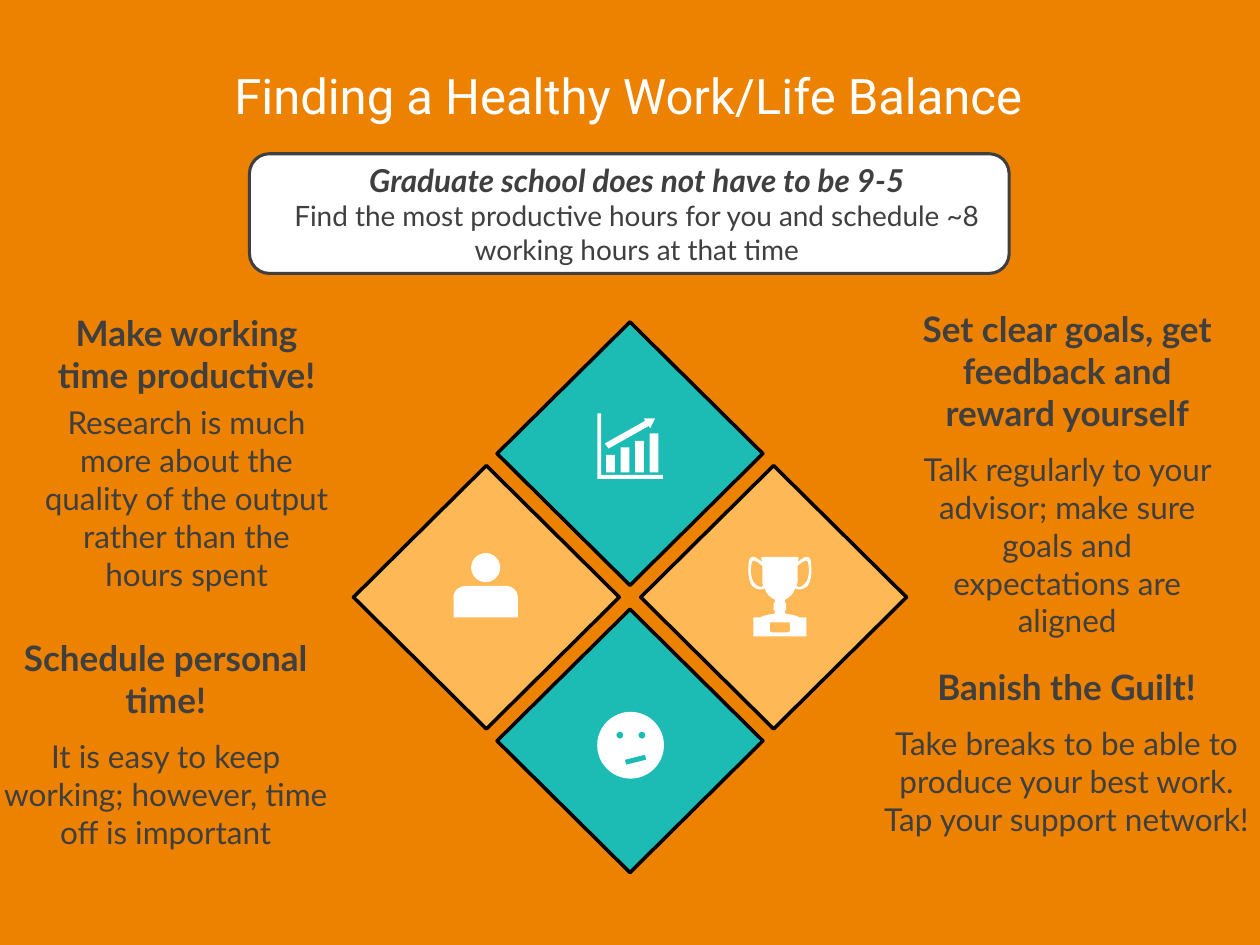
from math import cos, pi, sin

from pptx import Presentation
from pptx.dml.color import RGBColor
from pptx.enum.shapes import MSO_SHAPE
from pptx.enum.text import MSO_ANCHOR, MSO_AUTO_SIZE, PP_ALIGN
from pptx.util import Inches, Pt

ORANGE = RGBColor(0xED, 0x81, 0x00)
TEAL = RGBColor(0x1C, 0xBB, 0xB4)
AMBER = RGBColor(0xFE, 0xB8, 0x56)
DARK = RGBColor(0x3F, 0x3F, 0x3F)
WHITE = RGBColor(0xFF, 0xFF, 0xFF)
BLACK = RGBColor(0x00, 0x00, 0x00)

DIAMOND, ROUNDED = MSO_SHAPE.DIAMOND, MSO_SHAPE.ROUNDED_RECTANGLE
TOP, MIDDLE = MSO_ANCHOR.TOP, MSO_ANCHOR.MIDDLE
CENTER, NO_AUTOFIT = PP_ALIGN.CENTER, MSO_AUTO_SIZE.NONE

# The grid has 100 columns and 75 rows of square cells
COLUMNS, ROWS = 100, 75
CELL = Inches(0.1)


def cells(*counts):
    return [round(count * CELL) for count in counts]


# Outlines for the icons, as lists of grid points
def box(left, top, right, bottom):
    return [(left, top), (right, top), (right, bottom), (left, bottom)]


def circle(x, y, radius, count=48):
    angles = [2 * pi * step / count for step in range(count)]
    return [(x + radius * cos(angle), y + radius * sin(angle)) for angle in angles]


def trace(*nodes, steps=8):
    """Join nodes: two numbers are a corner, six are a cubic curve."""
    points = []
    for node in nodes:
        if len(node) == 2:
            points.append(node)
            continue
        controls = [points[-1], node[:2], node[2:4], node[4:]]
        for t in (step / steps for step in range(1, steps + 1)):
            weights = ((1 - t) ** 3, 3 * t * (1 - t) ** 2, 3 * t * t * (1 - t), t ** 3)
            points.append(tuple(sum(weight * control[axis]
                                    for weight, control in zip(weights, controls))
                                for axis in (0, 1)))
    return points


def mirror(points, axis):
    return [(2 * axis - x, y) for x, y in points]


def symmetric(half, axis):
    return half + mirror(half, axis)[::-1]


class SlideBuilder:
    text_font, title_font = "Lato", "Roboto"
    heading_size, body_size = 20, 18

    def __init__(self, presentation, background):
        self.slide = presentation.slides.add_slide(presentation.slide_layouts[5])
        fill = self.slide.background.fill
        fill.solid()
        fill.fore_color.rgb = background

    def set_text(self, shape, lines, color=DARK, font=None, anchor=TOP, indent=0, inset=0.5):
        """Fill a shape with lines of (text, size, bold, italic, space before)."""
        frame = shape.text_frame
        frame.word_wrap, frame.auto_size = True, NO_AUTOFIT
        frame.vertical_anchor = anchor
        frame.margin_left, frame.margin_right = cells(1 + indent, 1)
        frame.margin_top, frame.margin_bottom = cells(inset, inset)
        for index, (text, size, bold, italic, space) in enumerate(lines):
            paragraph = frame.paragraphs[0] if index == 0 else frame.add_paragraph()
            paragraph.text = text
            paragraph.alignment = CENTER
            paragraph.space_before = Pt(space)
            style = paragraph.font
            style.name, style.size = font or self.text_font, Pt(size)
            style.bold, style.italic = bold, italic
            style.color.rgb = color

    def title(self, area, text):
        shape = self.slide.shapes.title
        shape.left, shape.top, shape.width, shape.height = cells(*area)
        self.set_text(shape, [(text, 28, False, False, 0)], WHITE, self.title_font,
                      MIDDLE, inset=1)

    def shape(self, kind, area, fill, line, width):
        shape = self.slide.shapes.add_shape(kind, *cells(*area))
        shape.shadow.inherit = False
        shape.fill.solid()
        shape.fill.fore_color.rgb = fill
        shape.line.color.rgb = line
        shape.line.width = Pt(width)
        return shape

    def callout(self, area, heading, body):
        shape = self.shape(ROUNDED, area, WHITE, DARK, 1.75)
        self.set_text(shape, [(heading, 18, True, True, 0), (body, 16, False, False, 0)],
                      anchor=MIDDLE, indent=1.2)

    def advice(self, area, heading, bodies, gap=9.6, indent=0):
        lines = [(heading, self.heading_size, True, False, 0)]
        for index, body in enumerate(bodies):
            lines.append((body, self.body_size, False, False, 0 if index else gap))
        self.set_text(self.slide.shapes.add_textbox(*cells(*area)), lines, indent=indent)

    def icon(self, *outlines):
        first, *others = [[cells(*point) for point in outline] for outline in outlines]
        builder = self.slide.shapes.build_freeform(*first[0])
        builder.add_line_segments(first[1:], close=True)
        for outline in others:
            builder.move_to(*outline[0])
            builder.add_line_segments(outline[1:], close=True)
        shape = builder.convert_to_shape()
        shape.shadow.inherit = False
        shape.fill.solid()
        shape.fill.fore_color.rgb = WHITE
        shape.line.fill.background()


def main():
    presentation = Presentation()
    presentation.slide_width, presentation.slide_height = cells(COLUMNS, ROWS)
    page = SlideBuilder(presentation, ORANGE)

    # Title and key message
    page.title((0.8, 2.4, 98.1, 10.3), "Finding a Healthy Work/Life Balance")
    page.callout((19.8, 12.2, 60.3, 9.5), "Graduate school does not have to be 9-5",
                 "Find the most productive hours for you and schedule ~8 "
                 "working hours at that time")

    # Four diamonds around a common centre
    width, height, step = 21.1, 20.9, 11.4
    for across, down, color in ((0, -1, TEAL), (0, 1, TEAL), (1, 0, AMBER), (-1, 0, AMBER)):
        left = 50 + across * step - width / 2
        top = 47.4 + down * step - height / 2
        page.shape(DIAMOND, (left, top, width, height), color, BLACK, 2)

    # Advice
    page.advice((1.1, 24.2, 26.2, 26.3), "Make working time productive!",
                ["Research is much more about the quality of the output "
                 "rather than the hours spent"], gap=4.8, indent=1.2)
    page.advice((71.6, 23.9, 26.2, 25.9), "Set clear goals, get feedback and reward yourself",
                ["Talk regularly to your advisor; make sure goals and expectations are aligned"])
    page.advice((-1.1, 50, 28.5, 20.6), "Schedule personal time!",
                ["It is easy to keep working; however, time off is important"])
    page.advice((68.5, 52.3, 32.3, 23.6), "Banish the Guilt!",
                ["Take breaks to be able to produce your best work.",
                 "Tap your support network!"])

    # Person
    shoulder = trace((38.55, 46.5), (40.1, 46.5), (40.7, 46.5, 41.1, 46.9, 41.1, 47.4),
                     (41.1, 49))
    page.icon(symmetric(shoulder, 38.55), circle(38.55, 45.05, 1.15))

    # Rising bar chart
    bars = [box(48.1 + 1.15 * index, top, 48.8 + 1.15 * index, 37.5)
            for index, top in enumerate((36.1, 35.5, 35, 34.4))]
    arrow = [(51.1, 33.2), (52, 33.2), (51.6, 34), (51.5, 33.8),
             (48.3, 35.6), (48, 35.2), (51.2, 33.4)]
    axes = [(47.4, 32.8), (47.7, 32.8), (47.7, 37.7), (52.6, 37.7), (52.6, 38), (47.4, 38)]
    page.icon(*bars, arrow, axes)

    # Trophy, drawn from its right half
    axis = 61.9
    cup = trace((axis, 44.2), (63.3, 44.2), (63.4, 44.2, 63.4, 44.4, 63.3, 44.6),
                (63.5, 44.5, 63.8, 44.2, 64, 44.2), (64.3, 44.2, 64.4, 44.4, 64.4, 45.3),
                (64.4, 45.8, 64.3, 46.2, 64.1, 46.5), (63.9, 46.7, 63.5, 46.9, 63.1, 46.7),
                (63, 47.1, 62.7, 47.4, 62.3, 47.6), (62.3, 47.8), (62.4, 47.9),
                (62.4, 48.4), (62.3, 48.5), (62.3, 48.7),
                (62.9, 48.8, 63.4, 48.9, 63.4, 49), (64, 49), (64, 50.5), (axis, 50.5))
    handle = trace((64, 44.5), (63.8, 44.5, 63.6, 44.7, 63.3, 44.9), (63.3, 46),
                   (63.3, 46.2, 63.3, 46.4, 63.2, 46.5), (63.5, 46.7, 63.7, 46.5, 63.9, 46.3),
                   (64.1, 46.1, 64.2, 45.7, 64.2, 45.3), (64.2, 44.7, 64.1, 44.5, 64, 44.5))
    plaque = [(axis, 49.4), (62.7, 49.4), (62.7, 50.1), (62.5, 50.2), (axis, 50.2)]
    page.icon(symmetric(cup, axis), handle, mirror(handle, axis), symmetric(plaque, axis))

    # Doubtful face
    mouth = [(51.2, 59.9), (49.6, 60.3), (49.7, 60.7), (51.3, 60.3)]
    page.icon(circle(50.05, 59.15, 2.65), circle(49.2, 58.35, 0.27),
              circle(50.95, 58.35, 0.27), mouth)

    presentation.save("out.pptx")


if __name__ == "__main__":
    main()
